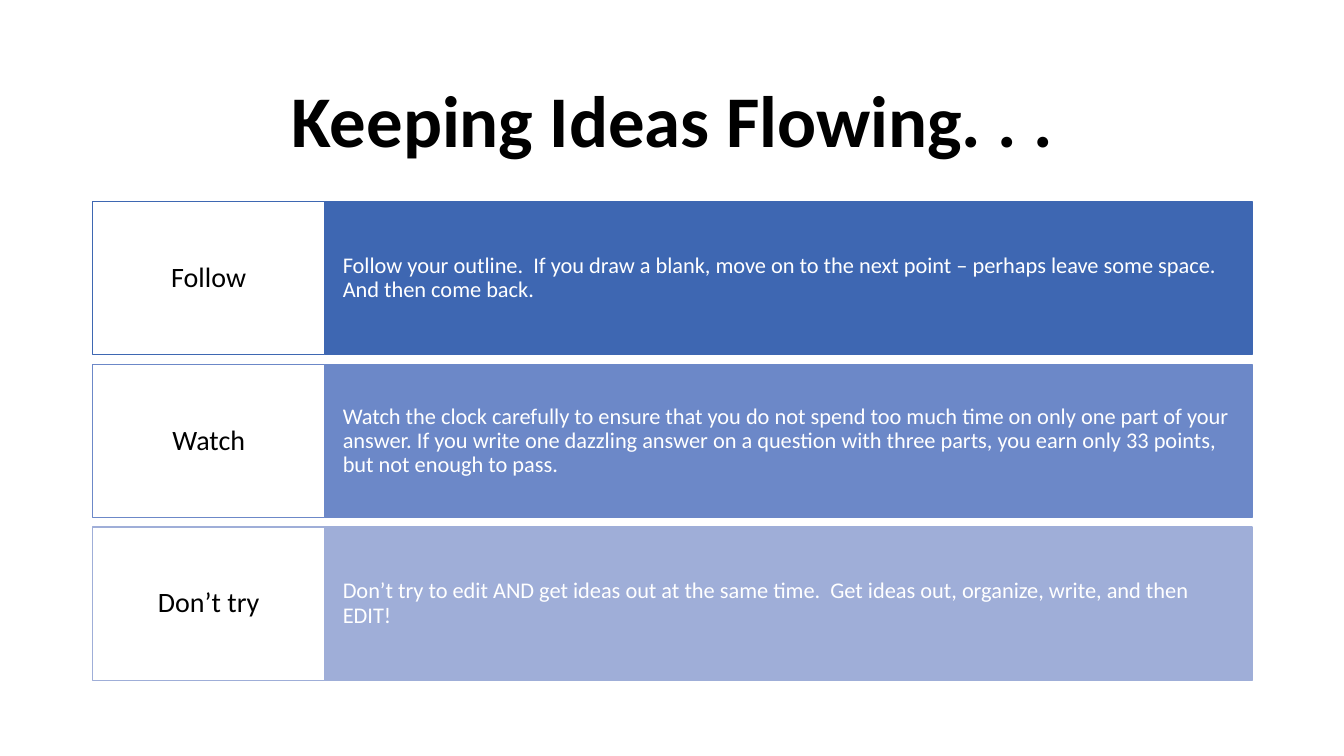
from pptx import Presentation
from pptx.dml.color import RGBColor
from pptx.enum import shapes, text
from pptx.util import Inches, Pt

BLACK = RGBColor(0x00, 0x00, 0x00)
WHITE = RGBColor(0xFF, 0xFF, 0xFF)
DARK_BLUE = RGBColor(0x3E, 0x67, 0xB2)
MID_BLUE = RGBColor(0x6C, 0x88, 0xC8)
LIGHT_BLUE = RGBColor(0x9F, 0xAE, 0xD8)

TITLE = "Keeping Ideas Flowing. . ."
TIPS = [
    ("Follow",
     "Follow your outline.  If you draw a blank, move on to the next point – "
     "perhaps leave some space.  And then come back.",
     DARK_BLUE),
    ("Watch",
     "Watch the clock carefully to ensure that you do not spend too much time "
     "on only one part of your answer. If you write one dazzling answer on a "
     "question with three parts, you earn only 33 points, but not enough to pass.",
     MID_BLUE),
    ("Don’t try",
     "Don’t try to edit AND get ideas out at the same time.  Get ideas out, "
     "organize, write, and then EDIT!",
     LIGHT_BLUE),
]

LEFT, TOP = 0.92, 2.0
LABEL_WIDTH, TIP_WIDTH = 2.3, 9.2
ROW_HEIGHT, ROW_STEP = 1.52, 1.615


def write(shape, words, size, color, bold=False, align=text.PP_ALIGN.CENTER,
          inset_x=0.1, inset_y=0.05):
    frame = shape.text_frame
    frame.word_wrap = True
    frame.vertical_anchor = text.MSO_ANCHOR.MIDDLE
    frame.margin_left = frame.margin_right = Inches(inset_x)
    frame.margin_top = frame.margin_bottom = Inches(inset_y)
    paragraph = frame.paragraphs[0]
    paragraph.alignment = align
    paragraph.line_spacing = 0.9
    run = paragraph.add_run()
    run.text = words
    run.font.name = "Calibri"
    run.font.size = Pt(size)
    run.font.bold = bold
    run.font.color.rgb = color


def add_box(slide, left, top, width, fill, line):
    box = slide.shapes.add_shape(
        shapes.MSO_SHAPE.RECTANGLE, Inches(left), Inches(top),
        Inches(width), Inches(ROW_HEIGHT))
    box.shadow.inherit = False
    box.fill.solid()
    box.fill.fore_color.rgb = fill
    box.line.color.rgb = line
    box.line.width = Pt(1)
    return box


def main():
    presentation = Presentation()
    presentation.slide_width = Inches(13.33)
    presentation.slide_height = Inches(7.5)
    slide = presentation.slides.add_slide(presentation.slide_layouts[6])

    title = slide.shapes.add_textbox(
        Inches(LEFT), Inches(0.61), Inches(LABEL_WIDTH + TIP_WIDTH), Inches(1.24))
    write(title, TITLE, size=52, color=BLACK, bold=True)

    for row, (label, tip, color) in enumerate(TIPS):
        top = TOP + row * ROW_STEP
        tip_box = add_box(slide, LEFT + LABEL_WIDTH, top, TIP_WIDTH, color, color)
        write(tip_box, tip, size=16, color=WHITE, align=text.PP_ALIGN.LEFT,
              inset_x=0.18, inset_y=0.39)
        label_box = add_box(slide, LEFT, top, LABEL_WIDTH, WHITE, color)
        write(label_box, label, size=20, color=BLACK, inset_x=0.12, inset_y=0.15)

    presentation.save("out.pptx")


if __name__ == "__main__":
    main()
